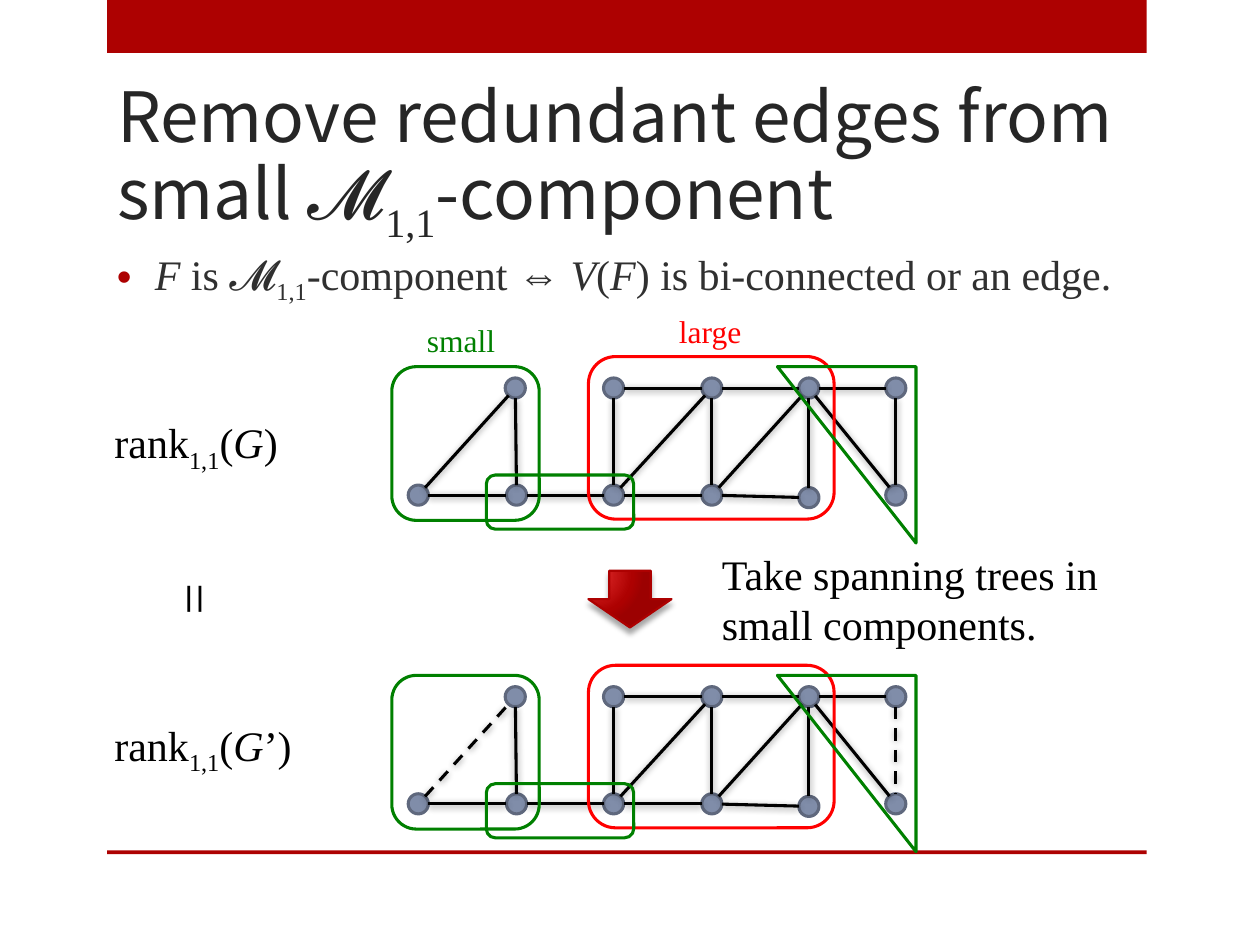
from math import hypot

from lxml.etree import SubElement
from pptx import Presentation
from pptx.dml.color import RGBColor
from pptx.enum.dml import MSO_LINE as Dash
from pptx.enum.shapes import MSO_CONNECTOR as Link, MSO_SHAPE as Kind
from pptx.enum.text import MSO_ANCHOR as Anchor, MSO_AUTO_SIZE as Fit, PP_ALIGN as Align
from pptx.oxml import parse_xml
from pptx.oxml.ns import nsdecls, qn
from pptx.util import Emu, Pt

PX = 9144  # 100 px to the inch
SERIF, SANS = "Times New Roman", "Noto Sans CJK JP"
RED = RGBColor(0xAD, 0x01, 0x01)
LARGE = RGBColor(0xFF, 0x00, 0x00)
SMALL = RGBColor(0x00, 0x80, 0x00)
NODE = RGBColor(0x80, 0x8D, 0xA9)
RIM = RGBColor(0x5F, 0x68, 0x7D)
BLACK = RGBColor(0x00, 0x00, 0x00)
TITLE = RGBColor(0x26, 0x26, 0x26)
BODY = RGBColor(0x30, 0x30, 0x30)

# Node centres and edges, relative to the top left of a graph
R = 8
TOP, LOW = 25, 110
NODES = {
    "a": (21, LOW), "b": (98, TOP), "c": (99, LOW), "d": (176, TOP),
    "e": (176, LOW), "f": (254, TOP), "g": (254, LOW), "h": (331, TOP),
    "i": (331, LOW + 2), "j": (400, TOP), "k": (400, LOW),
}
EDGES = "ab bc ac ce de df eg ef fg fh gi gh hi hj hk jk".split()
FRAMES = [
    (Kind.ROUNDED_RECTANGLE, (156, 0, 195, 129), LARGE, 0),
    (Kind.ROUNDED_RECTANGLE, (0, 8, 117, 122), SMALL, 0),
    (Kind.ROUNDED_RECTANGLE, (75, 94, 117, 43), SMALL, 0),
    (Kind.RIGHT_TRIANGLE, (306, 8, 110, 140), SMALL, 180),
]


def px(*vals):
    return [Emu(round(v * PX)) for v in vals]


def shade(shape, alpha, blur, dist, turn):
    """Give a shape or connector a soft black shadow."""
    props = shape._element.spPr
    fx = props.find(qn("a:effectLst"))
    if fx is None:
        fx = SubElement(props, qn("a:effectLst"))
    outer = SubElement(fx, qn("a:outerShdw"), blurRad=str(Pt(blur)),
                       dist=str(Pt(dist)), dir=str(turn * 60000), rotWithShape="0")
    color = SubElement(outer, qn("a:srgbClr"), val="000000")
    SubElement(color, qn("a:alpha"), val=str(alpha * 1000))


def draw(parts, kind, box, fill=None, line=None, width=1.75):
    shape = parts.add_shape(kind, *px(*box))
    shape.shadow.inherit = False
    if fill is None:
        shape.fill.background()
    else:
        shape.fill.solid()
        shape.fill.fore_color.rgb = fill
    if line is None:
        shape.line.fill.background()
    else:
        shape.line.color.rgb = line
        shape.line.width = Pt(width)
    return shape


def write(para, runs, size, color, font=SERIF):
    """Add runs given as (text, mark); the mark is '', 'i' or 'sub'."""
    for text, mark in runs:
        run = para.add_run()
        run.text = text
        look = {"size": Pt(size), "name": font, "italic": mark == "i"}
        if mark == "sub":
            look["name"] = SERIF
            run._r.get_or_add_rPr().set("baseline", "-25000")
        for key, val in look.items():
            setattr(run.font, key, val)
        run.font.color.rgb = color


def label(parts, box, lines, size=24, color=BLACK, wrap=False):
    shape = parts.add_textbox(*px(*box))
    frame = shape.text_frame
    frame.word_wrap = wrap
    frame.auto_size = Fit.NONE if wrap else Fit.SHAPE_TO_FIT_TEXT
    for n, runs in enumerate(lines):
        para = frame.add_paragraph() if n else frame.paragraphs[0]
        write(para, runs, size, color)
    return shape


def head(slide, box):
    title = slide.shapes.title
    title.left, title.top, title.width, title.height = px(*box)
    frame = title.text_frame
    look = {"word_wrap": True, "auto_size": Fit.NONE, "vertical_anchor": Anchor.BOTTOM}
    for key, val in look.items():
        setattr(frame, key, val)
    para = frame.paragraphs[0]
    para.alignment = Align.LEFT
    para.line_spacing = 0.84
    write(para, [("Remove redundant edges from small 𝓜", ""), ("1,1", "sub"),
                 ("-component", "")], 39.6, TITLE, SANS)


def claim(slide, box):
    runs = [("F", "i"), (" is 𝓜", ""), ("1,1", "sub"), ("-component ⇔ ", ""),
            ("V", "i"), ("(", ""), ("F", "i"), (") is bi-connected or an edge.", "")]
    para = label(slide.shapes, box, [runs], color=BODY, wrap=True).text_frame.paragraphs[0]
    para.space_before = Pt(5)
    props = para._p.get_or_add_pPr()
    props.set("marL", str(30 * PX))
    props.set("indent", str(-30 * PX))
    SubElement(SubElement(props, qn("a:buClr")), qn("a:srgbClr"), val=str(RED))
    SubElement(props, qn("a:buFont"), typeface="Arial")
    SubElement(props, qn("a:buChar"), char="•")


def step(slide, x, y):
    """Down arrow with its caption."""
    parts = slide.shapes.add_group_shape().shapes
    arrow = draw(parts, Kind.DOWN_ARROW, (x, y + 23, 66, 45), RED, RED, 1.25)
    stops = "".join(f'<a:gs pos="{at}000"><a:srgbClr val="{color}"/></a:gs>'
                    for at, color in [(0, "E62F2F"), (76, RED), (100, "9C0101")])
    props = arrow._element.spPr
    props.replace(props.find(qn("a:solidFill")), parse_xml(
        f'<a:gradFill {nsdecls("a")} rotWithShape="1"><a:gsLst>{stops}</a:gsLst>'
        '<a:path path="circle"><a:fillToRect l="15000" t="15000" r="100000" b="100000"/>'
        '</a:path></a:gradFill>'))
    shade(arrow, 35, 3, 3, 90)
    label(parts, (x + 96, y, 322, 91),
          [[("Take spanning trees in", "")], [("small components.", "")]])


def graph(slide, x, y, cut=(), tags=()):
    """Nodes, edges and component frames; cut edges are dashed."""
    parts = slide.shapes.add_group_shape().shapes
    for cx, cy in NODES.values():
        draw(parts, Kind.OVAL, (x + cx - R, y + cy - R, 2 * R, 2 * R), NODE, RIM)
    for edge in EDGES:
        (ax, ay), (bx, by) = (NODES[name] for name in edge)
        span = hypot(bx - ax, by - ay)
        dx, dy = (bx - ax) * R / span, (by - ay) * R / span
        link = parts.add_connector(Link.STRAIGHT, *px(
            x + ax + dx, y + ay + dy, x + bx - dx, y + by - dy))
        link.line.color.rgb = BLACK
        link.line.width = Pt(1.75)
        if edge in cut:
            link.line.dash_style = Dash.DASH
        shade(link, 40, 4, 1, 88)
    for kind, (fx, fy, w, h), color, turn in FRAMES:
        draw(parts, kind, (x + fx, y + fy, w, h), line=color).rotation = turn
    for text, (tx, ty, w, h), color in tags:
        label(parts, (x + tx, y + ty, w, h), [[(text, "")]], 18, color)


def ranks(slide, x, y):
    """Rank of G, an upright equals sign, rank of G’."""
    for top, width, name, end in [(0, 155, "G", ")"), (240, 166, "G", "’)")]:
        runs = [("rank", ""), ("1,1", "sub"), ("(", ""), (name, "i"), (end, "")]
        label(slide.shapes, (x, y + top, width, 50), [runs])
    sign = label(slide.shapes, (x + 34, y + 127, 74, 35), [[("=", "")]], 32)
    sign.text_frame._txBody.bodyPr.set("vert", "eaVert")


def main():
    deck = Presentation()
    deck.slide_width, deck.slide_height = px(1000, 750)
    slide = deck.slides.add_slide(deck.slide_layouts[5])
    # Bands
    for top, height in [(0, 42), (675, 3)]:
        draw(slide.shapes, Kind.RECTANGLE, (85, top, 825, height), RED)
    # Text
    head(slide, (83, 75, 825, 117))
    claim(slide, (83, 192, 825, 483))
    step(slide, 467, 430)
    ranks(slide, 81, 326)
    # Graphs before and after
    graph(slide, 311, 283, tags=[("small", (18, -33, 75, 40), SMALL),
                                 ("large", (218, -40, 71, 40), LARGE)])
    graph(slide, 311, 528, cut=("ab", "jk"))
    deck.save("out.pptx")


if __name__ == "__main__":
    main()
